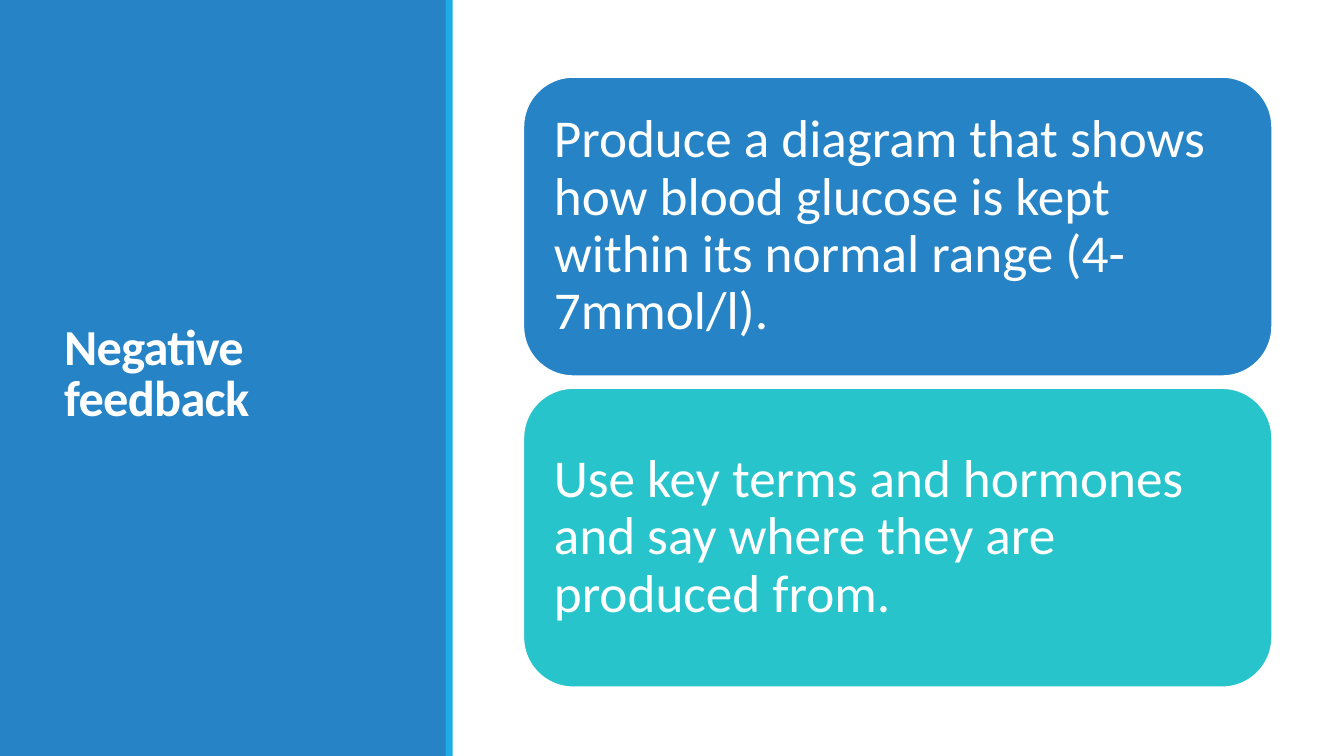
from pptx import Presentation
from pptx.dml.color import RGBColor
from pptx.enum.shapes import MSO_SHAPE as Shape
from pptx.enum.text import MSO_ANCHOR as Anchor, PP_ALIGN as Align
from pptx.util import Cm, Pt

TITLE = "Negative feedback"
TASKS = [
    ("Produce a diagram that shows how blood glucose is kept "
     "within its normal range (4- 7mmol/l).", "blue"),
    ("Use key terms and hormones and say where they are produced from.", "teal"),
]
COLORS = {"blue": "2683C6", "sky": "1CADE4", "teal": "28C4CC", "white": "FFFFFF"}
FONT = "Calibri"

SLIDE_WIDTH, SLIDE_HEIGHT = 33.87, 19.05
PANEL_WIDTH = 11.25
STRIPE_LEFT, STRIPE_WIDTH = 11.23, 0.18
CARD_LEFT, CARD_TOP = 13.19, 1.94
CARD_WIDTH, CARD_HEIGHT, CARD_GAP = 18.87, 7.54, 0.3
CARD_INSET = 0.4


def color(name):
    return RGBColor.from_string(COLORS[name])


def add_block(slide, kind, left, top, width, height, fill):
    shape = slide.shapes.add_shape(kind, Cm(left), Cm(top), Cm(width), Cm(height))
    shape.shadow.inherit = False
    shape.fill.solid()
    shape.fill.fore_color.rgb = color(fill)
    shape.line.fill.background()
    return shape


def write_text(shape, text, size, line_spacing, bold=False):
    """Fill the shape with one left-aligned, vertically centred white paragraph."""
    frame = shape.text_frame
    frame.word_wrap = True
    frame.vertical_anchor = Anchor.MIDDLE
    paragraph = frame.paragraphs[0]
    paragraph.alignment = Align.LEFT
    paragraph.line_spacing = line_spacing
    font = paragraph.font
    font.name, font.size, font.bold = FONT, Pt(size), bold
    font.color.rgb = color("white")
    run = paragraph.add_run()
    run.text = text
    return run


def add_title_panel(slide):
    add_block(slide, Shape.RECTANGLE, 0, 0, PANEL_WIDTH, SLIDE_HEIGHT, "blue")
    title = slide.shapes.add_textbox(Cm(1.37), Cm(1.45), Cm(8.56), Cm(16.03))
    run = write_text(title, TITLE, 36, 0.85, bold=True)
    run._r.get_or_add_rPr().set("spc", "-50")
    add_block(slide, Shape.RECTANGLE, STRIPE_LEFT, 0, STRIPE_WIDTH, SLIDE_HEIGHT, "sky")


def add_task_cards(slide):
    for index, (text, fill) in enumerate(TASKS):
        top = CARD_TOP + index * (CARD_HEIGHT + CARD_GAP)
        card = add_block(slide, Shape.ROUNDED_RECTANGLE,
                         CARD_LEFT, top, CARD_WIDTH, CARD_HEIGHT, fill)
        card.line.color.rgb = color("white")
        card.line.width = Pt(1.25)
        frame = card.text_frame
        frame.margin_left = frame.margin_right = Cm(CARD_INSET)
        frame.margin_top = frame.margin_bottom = Cm(CARD_INSET)
        write_text(card, text, 38, 0.9)


def main():
    presentation = Presentation()
    presentation.slide_width = Cm(SLIDE_WIDTH)
    presentation.slide_height = Cm(SLIDE_HEIGHT)
    slide = presentation.slides.add_slide(presentation.slide_layouts[6])
    add_title_panel(slide)
    add_task_cards(slide)
    presentation.save("out.pptx")


if __name__ == "__main__":
    main()
